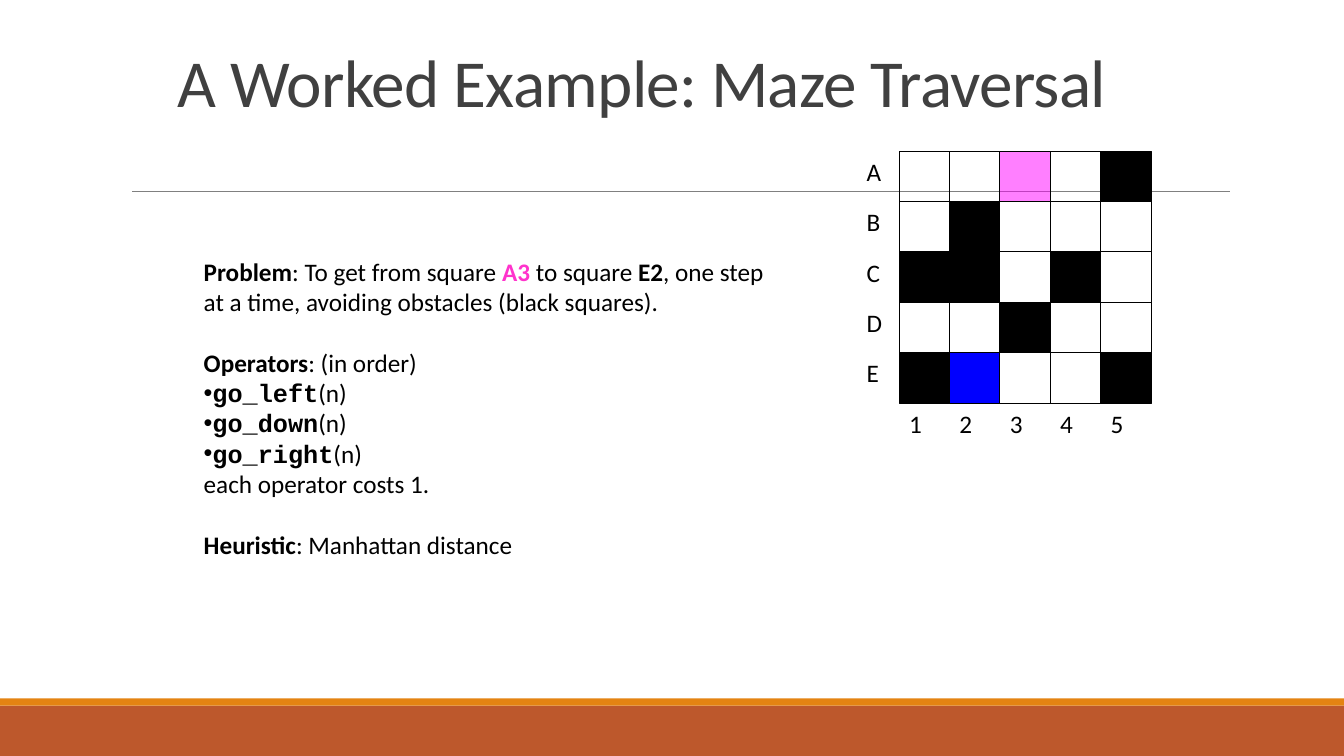
"""Build the maze traversal slide."""
import pptx
import pptx.dml.color
import pptx.enum.shapes
import pptx.enum.text
import pptx.oxml.ns
import pptx.util
from lxml import etree
from pptx.util import Cm, Pt

RGBColor = pptx.dml.color.RGBColor
BLACK = RGBColor(0x00, 0x00, 0x00)
GREY = RGBColor(0x80, 0x80, 0x80)
DARK = RGBColor(0x40, 0x40, 0x40)
RUST = RGBColor(0xBD, 0x58, 0x2C)
ORANGE = RGBColor(0xE4, 0x83, 0x12)
MAGENTA = RGBColor(0xFF, 0x00, 0xFF)
PINK = RGBColor(0xFF, 0x33, 0xCC)
BLUE = RGBColor(0x00, 0x00, 0xFF)

TITLE = "A Worked Example: Maze Traversal"
MAZE = {
    "A": "..S.#",
    "B": ".#...",
    "C": "##.#.",
    "D": "..#..",
    "E": "#G..#",
}
CELL_FILLS = {"#": BLACK, "S": MAGENTA, "G": BLUE}
BOLD = {"bold": True}
START = {"bold": True, "color": PINK}
CODE = {"bold": True, "name": "Courier New"}
# Each paragraph: space before in points, bulleted, runs
BODY = [
    (0, False, [("Problem", BOLD), (": To get from square ", {}), ("A3", START),
                (" to square ", {}), ("E2", BOLD),
                (", one step at a time, avoiding obstacles (black squares).", {})]),
    (22, False, [("Operators", BOLD), (": (in order)", {})]),
    (0, True, [("go_left", CODE), ("(n)", {})]),
    (0, True, [("go_down", CODE), ("(n)", {})]),
    (0, True, [("go_right", CODE), ("(n)", {})]),
    (0, False, [("each operator costs 1.", {})]),
    (22, False, [("Heuristic", BOLD), (": Manhattan distance", {})]),
]

SLIDE_W, SLIDE_H = Cm(33.87), Cm(19.05)
CELL = Cm(1.27)
MAZE_LEFT, MAZE_TOP = Cm(22.66), Cm(3.81)
ROW_LABEL_LEFT = Cm(21.59)
LABEL_H = Cm(1.02)


def place(shape, left, top, width, height):
    """Set a shape's position and size."""
    shape.left, shape.top, shape.width, shape.height = left, top, width, height


def add_rect(s, left, top, width, height, fill=None, line=None):
    """Add a flat rectangle with an optional fill and outline."""
    sp = s.shapes.add_shape(pptx.enum.shapes.MSO_SHAPE.RECTANGLE, left, top, width, height)
    sp.shadow.inherit = False
    if fill is None:
        sp.fill.background()
    else:
        sp.fill.solid()
        sp.fill.fore_color.rgb = fill
    if line is None:
        sp.line.fill.background()
    else:
        sp.line.color.rgb = line
        sp.line.width = Pt(0.75)
    return sp


def add_label(s, text, left, top):
    """Add a row or column label of the maze."""
    tf = s.shapes.add_textbox(left, top, CELL, LABEL_H).text_frame
    tf.word_wrap = True
    p = tf.paragraphs[0]
    p.text = text
    p.font.name, p.font.size = "Calibri", Pt(18)
    p.font.color.rgb = BLACK


def add_frame(s):
    """Add the footer bands and the rule under the title."""
    add_rect(s, 0, Cm(17.78), SLIDE_W, Cm(1.27), RUST)
    add_rect(s, 0, Cm(17.6), SLIDE_W, Cm(0.18), ORANGE)
    rule = s.shapes.add_connector(pptx.enum.shapes.MSO_CONNECTOR.STRAIGHT,
                                  Cm(3.33), Cm(4.83), Cm(31), Cm(4.83))
    rule.line.color.rgb = GREY
    rule.line.width = Pt(0.5)
    etree.SubElement(rule._element.spPr, pptx.oxml.ns.qn("a:effectLst"))


def add_title(s):
    """Fill the title placeholder."""
    sp = s.shapes.title
    place(sp, Cm(4.23), 0, Cm(25.4), Cm(3.18))
    tf = sp.text_frame
    tf.auto_size = pptx.enum.text.MSO_AUTO_SIZE.NONE
    tf.vertical_anchor = pptx.enum.text.MSO_ANCHOR.BOTTOM
    p = tf.paragraphs[0]
    r = p.add_run()
    r.text = TITLE
    r._r.get_or_add_rPr().set("spc", "-50")
    p.alignment = pptx.enum.text.PP_ALIGN.LEFT
    p.line_spacing = 0.85
    p.font.name, p.font.size = "Calibri", Pt(48)
    p.font.color.rgb = DARK


def add_body(s):
    """Fill the body placeholder with the problem statement."""
    sp = s.placeholders[1]
    place(sp, Cm(4.88), Cm(6.32), Cm(14.81), Cm(7.95))
    tf = sp.text_frame
    tf.auto_size = pptx.enum.text.MSO_AUTO_SIZE.NONE
    for i, (before, bulleted, runs) in enumerate(BODY):
        p = tf.add_paragraph() if i else tf.paragraphs[0]
        p.space_before = Pt(before)
        p.font.size = Pt(18)
        pPr = p._p.get_or_add_pPr()
        pPr.set("marL", "0")
        pPr.set("indent", "0")
        tag = "a:buChar" if bulleted else "a:buNone"
        bullet = etree.Element(pptx.oxml.ns.qn(tag))
        if bulleted:
            bullet.set("char", "•")
        pPr.find(pptx.oxml.ns.qn("a:defRPr")).addprevious(bullet)
        for text, style in runs:
            r = p.add_run()
            r.text = text
            r.font.name = style.get("name", "Calibri")
            r.font.bold = style.get("bold", False)
            r.font.color.rgb = style.get("color", BLACK)


def add_maze(s):
    """Draw the maze cells with their row and column labels."""
    for row, (name, cells) in enumerate(MAZE.items()):
        top = MAZE_TOP + row * CELL
        add_label(s, name, ROW_LABEL_LEFT, top)
        for col, kind in enumerate(cells):
            sp = add_rect(s, MAZE_LEFT + col * CELL, top, CELL, CELL,
                          CELL_FILLS.get(kind), BLACK)
            if kind == "S":
                clr = sp._element.spPr.find(".//" + pptx.oxml.ns.qn("a:srgbClr"))
                etree.SubElement(clr, pptx.oxml.ns.qn("a:alpha"), val="50000")
    for col in range(len(MAZE["A"])):
        add_label(s, str(col + 1), MAZE_LEFT + col * CELL, MAZE_TOP + len(MAZE) * CELL)


def main():
    """Build and save the presentation."""
    prs = pptx.Presentation()
    prs.slide_width, prs.slide_height = SLIDE_W, SLIDE_H
    s = prs.slides.add_slide(prs.slide_layouts[1])
    add_frame(s)
    add_title(s)
    add_body(s)
    add_maze(s)
    prs.save("out.pptx")


if __name__ == "__main__":
    main()
